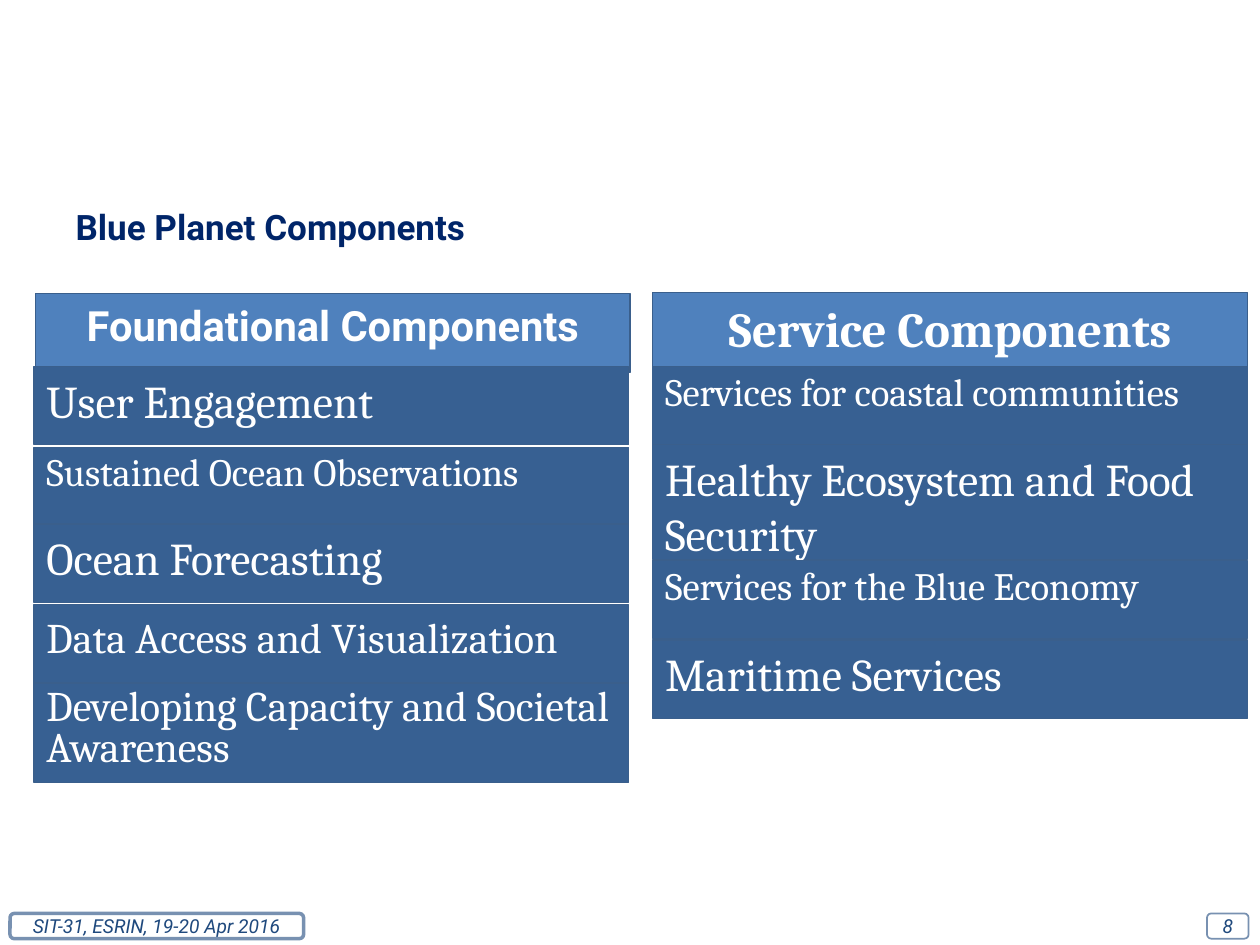
from dataclasses import dataclass

from lxml import etree
from pptx import Presentation
from pptx.dml.color import RGBColor
from pptx.enum.shapes import MSO_SHAPE
from pptx.enum.text import MSO_ANCHOR, MSO_AUTO_SIZE, PP_ALIGN
from pptx.oxml.ns import qn
from pptx.util import Inches, Pt

RECTANGLE = MSO_SHAPE.RECTANGLE
ROUNDED = MSO_SHAPE.ROUNDED_RECTANGLE
TOP, MIDDLE = MSO_ANCHOR.TOP, MSO_ANCHOR.MIDDLE
LEFT, CENTER = PP_ALIGN.LEFT, PP_ALIGN.CENTER
NO_AUTOFIT = MSO_AUTO_SIZE.NONE


@dataclass(frozen=True)
class Theme:
    sans: str = "Roboto"
    serif: str = "Cambria"
    white: str = "FFFFFF"
    navy: str = "002569"
    footer_blue: str = "1F497D"
    header_fill: str = "4F81BD"
    row_fill: str = "376092"
    outline: str = "3A5F8C"
    title_size: float = 20
    footer_size: float = 11
    large: float = 26
    medium: float = 24.1
    small: float = 22.1


THEME = Theme()
COLUMN_WIDTH = 4.72
HEADER_HEIGHT = 0.63
ROW_HEIGHT = 0.62

# Each row: text, top, height, type size, line spacing
FOUNDATIONAL_ROWS = [
    ("User Engagement", 2.91, ROW_HEIGHT, THEME.large, 1),
    ("Sustained Ocean Observations", 3.55, ROW_HEIGHT, THEME.small, 0.9),
    ("Ocean Forecasting", 4.16, ROW_HEIGHT, THEME.large, 1),
    ("Data Access and Visualization", 4.8, ROW_HEIGHT, THEME.medium, 1),
    ("Developing Capacity and Societal Awareness", 5.42, 0.79, THEME.medium, 0.8),
]
SERVICE_ROWS = [
    ("Services for coastal communities", 2.91, ROW_HEIGHT, THEME.small, 0.9),
    ("Healthy Ecosystem and Food Security", 3.53, 0.91, THEME.large, 1),
    ("Services for the Blue Economy", 4.45, ROW_HEIGHT, THEME.small, 0.9),
    ("Maritime Services", 5.08, ROW_HEIGHT, THEME.large, 1),
]


def write_text(shape, text, font_name, size, color, bold=False, italic=False,
               align=LEFT, anchor=TOP, spacing=1):
    frame = shape.text_frame
    frame.word_wrap = True
    frame.auto_size = NO_AUTOFIT
    frame.vertical_anchor = anchor
    para = frame.paragraphs[0]
    para.alignment = align
    para.line_spacing = spacing
    para.space_before = Pt(0)
    span = para.add_run()
    span.text = text
    font = span.font
    font.name, font.size = font_name, Pt(size)
    font.bold, font.italic = bold, italic
    font.color.rgb = RGBColor.from_string(color)


def add_panel(page, kind, left, top, width, height, fill, line, line_width):
    panel = page.shapes.add_shape(
        kind, Inches(left), Inches(top), Inches(width), Inches(height))
    panel.shadow.inherit = False
    panel.fill.solid()
    panel.fill.fore_color.rgb = RGBColor.from_string(fill)
    panel.line.color.rgb = RGBColor.from_string(line)
    panel.line.width = Pt(line_width)
    return panel


def set_opacity(solid_fill, percent):
    alpha = etree.SubElement(solid_fill.find(qn("a:srgbClr")), qn("a:alpha"))
    alpha.set("val", str(percent * 1000))


def add_title(page):
    title = page.shapes.title
    title.left, title.top = Inches(0.5), Inches(1.58)
    title.width, title.height = Inches(8.92), Inches(0.6)
    write_text(title, "Blue Planet Components", THEME.sans, THEME.title_size,
               THEME.navy, bold=True)


def add_header(page, text, left, top, font_name, size):
    header = add_panel(page, RECTANGLE, left, top, COLUMN_WIDTH, HEADER_HEIGHT,
                       THEME.header_fill, THEME.outline, 0.75)
    write_text(header, text, font_name, size, THEME.white, bold=True, align=CENTER)


def add_rows(page, left, rows):
    for text, top, height, size, spacing in rows:
        row = add_panel(page, RECTANGLE, left, top, COLUMN_WIDTH, height,
                        THEME.row_fill, THEME.outline, 0.75)
        write_text(row, text, THEME.serif, size, THEME.white, spacing=spacing)


def add_footer_pill(page, text, left, width, line_width):
    """Add a translucent rounded label at the foot of the page."""
    pill = add_panel(page, ROUNDED, left, 7.25, width, 0.2,
                     THEME.white, THEME.footer_blue, line_width)
    properties = pill.fill._xPr
    set_opacity(properties.find(qn("a:solidFill")), 49)
    set_opacity(properties.find(qn("a:ln")).find(qn("a:solidFill")), 60)
    frame = pill.text_frame
    frame.margin_left = frame.margin_right = Inches(0)
    frame.margin_top = frame.margin_bottom = Inches(0)
    write_text(pill, text, THEME.sans, THEME.footer_size, THEME.footer_blue,
               italic=True, align=CENTER, anchor=MIDDLE)


def main():
    deck = Presentation()
    deck.slide_width, deck.slide_height = Inches(10), Inches(7.5)
    page = deck.slides.add_slide(deck.slide_layouts[5])

    add_footer_pill(page, "SIT-31, ESRIN, 19-20 Apr 2016", 0.08, 2.33, 2)
    add_title(page)
    add_footer_pill(page, "8", 9.58, 0.33, 1)
    add_header(page, "Foundational Components", 0.28, 2.33, THEME.sans, 23.8)
    add_rows(page, 0.27, FOUNDATIONAL_ROWS)
    add_header(page, "Service Components", 5.18, 2.32, THEME.serif, 28)
    add_rows(page, 5.18, SERVICE_ROWS)

    deck.save("out.pptx")


if __name__ == "__main__":
    main()
